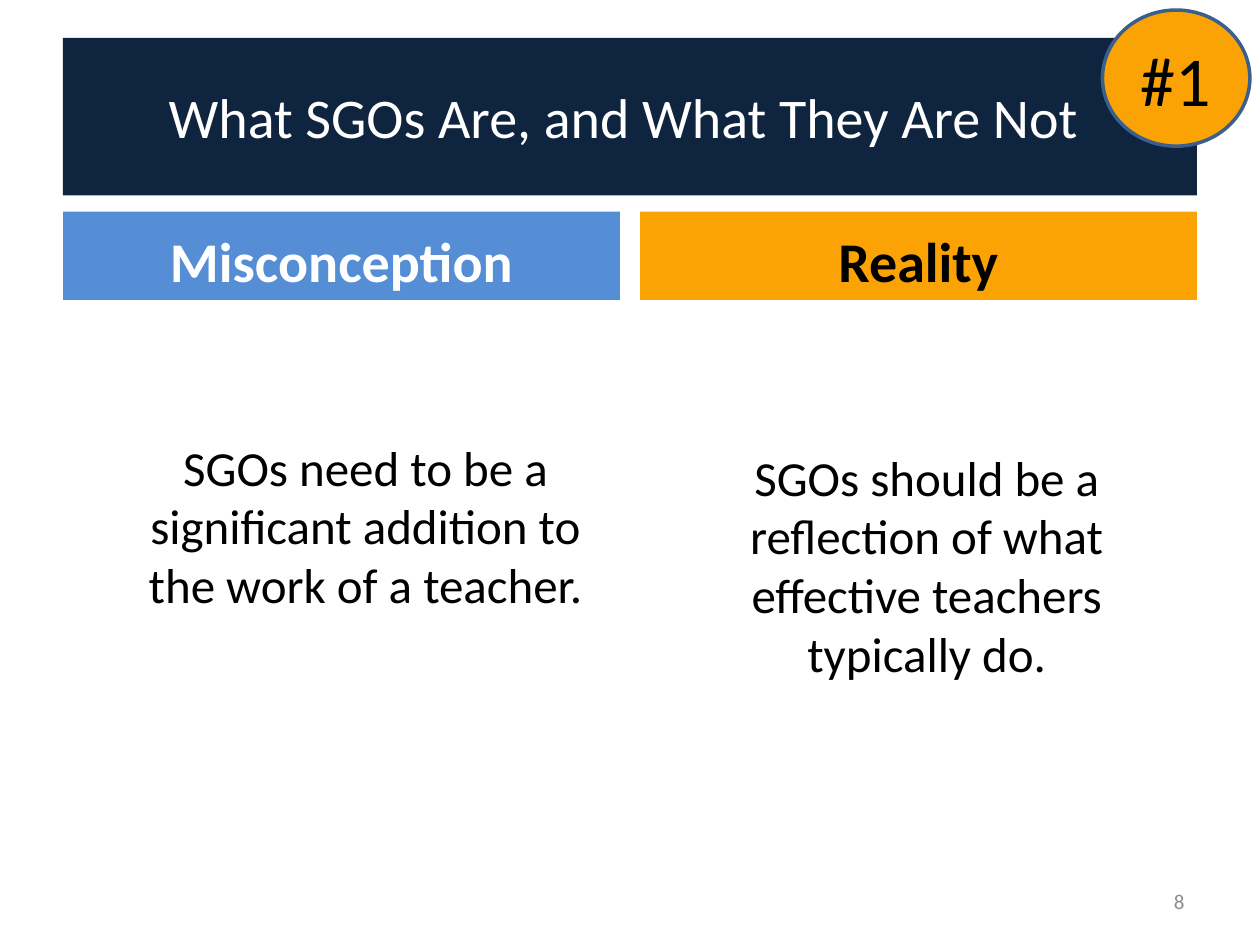
import pptx
import pptx.util
import pptx.dml.color
import pptx.enum.shapes
import pptx.enum.text
import pptx.oxml
import pptx.oxml.ns

Inches = pptx.util.Inches
Pt = pptx.util.Pt
SHAPE = pptx.enum.shapes.MSO_SHAPE
ALIGN = pptx.enum.text.PP_ALIGN
ANCHOR = pptx.enum.text.MSO_ANCHOR

FONT = "Calibri"
COLORS = {
    "navy": "0F243E",
    "blue": "558ED5",
    "orange": "FBA305",
    "outline": "3A5F8C",
    "white": "FFFFFF",
    "black": "000000",
    "gray": "8C8C8C",
}


def rgb(name):
    return pptx.dml.color.RGBColor.from_string(COLORS[name])


def write(shape, text, size, color, bold=False, align=ALIGN.CENTER, anchor=ANCHOR.MIDDLE):
    frame = shape.text_frame
    frame.word_wrap = True
    frame.vertical_anchor = anchor
    paragraph = frame.paragraphs[0]
    paragraph.alignment = align
    run = paragraph.add_run()
    run.text = text
    run.font.name = FONT
    run.font.size = Pt(size)
    run.font.bold = bold
    run.font.color.rgb = rgb(color)
    return paragraph


def space_before(paragraph, percent):
    """Paragraph spacing as a share of the line height."""
    paragraph._p.get_or_add_pPr().insert(0, pptx.oxml.parse_xml(
        f'<a:spcBef {pptx.oxml.ns.nsdecls("a")}>'
        f'<a:spcPct val="{percent * 1000}"/></a:spcBef>'))


def add_panel(slide, kind, box, fill, outline=None):
    panel = slide.shapes.add_shape(kind, *map(Inches, box))
    panel.shadow.inherit = False
    panel.fill.solid()
    panel.fill.fore_color.rgb = rgb(fill)
    if outline:
        panel.line.color.rgb = rgb(outline)
        panel.line.width = Pt(2)
    else:
        panel.line.fill.background()
    return panel


def add_title(slide, box, text):
    banner = add_panel(slide, SHAPE.RECTANGLE, box, "navy")
    write(banner, text, 32, "white")


def add_column(slide, heading_box, body_box, heading, statement, fill, heading_color):
    # Heading bar
    bar = add_panel(slide, SHAPE.RECTANGLE, heading_box, fill)
    space_before(write(bar, heading, 32, heading_color, bold=True, anchor=ANCHOR.BOTTOM), 20)
    # Indented statement
    body = slide.shapes.add_textbox(*map(Inches, body_box))
    paragraph = write(body, statement, 28, "black", anchor=ANCHOR.TOP)
    space_before(paragraph, 20)
    properties = paragraph._p.get_or_add_pPr()
    properties.set("marL", str(Inches(0.38)))
    properties.set("indent", "0")


def add_badge(slide, box, text):
    badge = add_panel(slide, SHAPE.OVAL, box, "orange", "outline")
    write(badge, text, 40, "black")


def add_page_number(slide, box, number):
    page = slide.shapes.add_textbox(*map(Inches, box))
    write(page, number, 12, "gray", align=ALIGN.RIGHT)


def main():
    deck = pptx.Presentation()
    deck.slide_width, deck.slide_height = Inches(10), Inches(7.5)
    slide = deck.slides.add_slide(deck.slide_layouts[6])

    add_title(slide, (0.5, 0.3, 9, 1.25), "What SGOs Are, and What They Are Not ")
    add_column(slide, (0.5, 1.68, 4.42, 0.7), (0.5, 3.42, 4.42, 3.28), "Misconception",
               "SGOs need to be a significant addition to the work of a teacher.",
               "blue", "white")
    add_column(slide, (5.08, 1.68, 4.42, 0.7), (4.83, 3.5, 4.67, 3.2), "Reality",
               "SGOs should be a reflection of what effective teachers typically do.",
               "orange", "black")
    add_badge(slide, (8.75, 0.08, 1.17, 1.08), "#1")
    add_page_number(slide, (7.17, 6.95, 2.33, 0.4), "8")

    deck.save("out.pptx")


if __name__ == "__main__":
    main()
